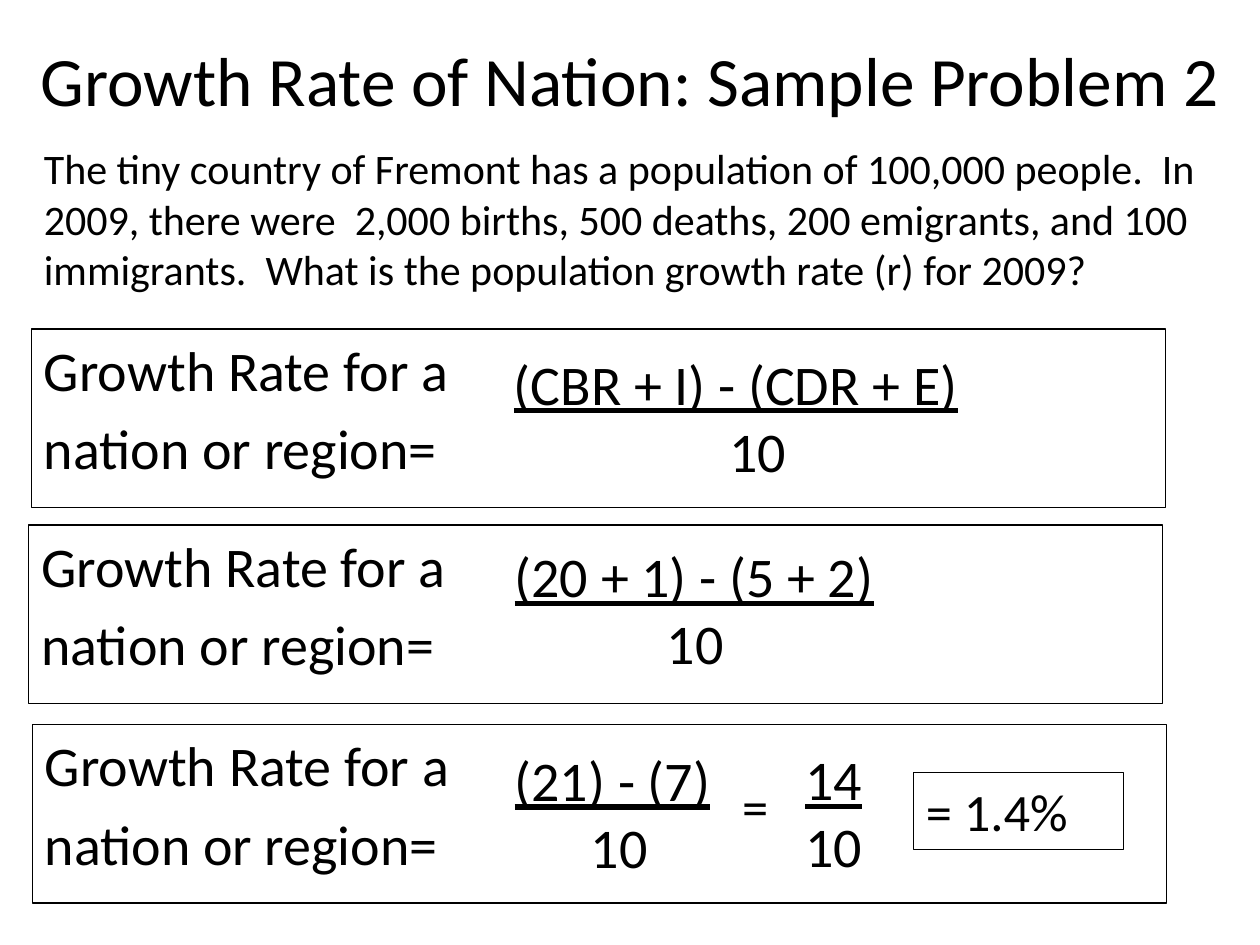
"""Build a slide that solves a population growth rate problem."""
from dataclasses import dataclass

from pptx import Presentation
from pptx.dml.color import RGBColor
from pptx.enum.shapes import MSO_SHAPE
from pptx.enum.text import MSO_ANCHOR, PP_ALIGN
from pptx.util import Pt

RECT = MSO_SHAPE.RECTANGLE
TOP, MIDDLE = MSO_ANCHOR.TOP, MSO_ANCHOR.MIDDLE
LEFT, CENTER = PP_ALIGN.LEFT, PP_ALIGN.CENTER
FONT = "Calibri"
COLORS = {"ink": "000000", "paper": "FFFFFF"}
PANEL_W, PANEL_H = 648, 102
FRACTION_H = 85


@dataclass
class Box:
    x: float
    y: float
    w: float
    h: float


@dataclass
class Line:
    text: str
    size: float = 32
    underline: bool = False
    indent: float = 0
    before: float = 0
    align: PP_ALIGN = LEFT


@dataclass
class Fraction:
    box: Box
    top: str
    bottom: str
    bottom_indent: float
    top_indent: float = 0


PANELS = [(18, 188), (16.5, 300), (18.5, 414)]
FRACTIONS = [
    Fraction(Box(286.5, 196, 284, FRACTION_H), "(CBR + I) - (CDR + E)", "10", 123),
    Fraction(Box(287, 306, 230, FRACTION_H), "(20 + 1) - (5 + 2)", "10", 87),
    Fraction(Box(287, 422.5, 130, FRACTION_H), "(21) - (7)", "10", 43.5),
    Fraction(Box(417, 422, 87, FRACTION_H), "14", "10", 36, 36),
]


def add_text(s, box: Box, lines: list[Line], framed: bool = False,
             anchor: MSO_ANCHOR = TOP) -> None:
    """Add a text box or an outlined rectangle holding the given lines."""
    place = [Pt(v) for v in (box.x, box.y, box.w, box.h)]
    if framed:
        sp = s.shapes.add_shape(RECT, *place)
        sp.shadow.inherit = False
        sp.fill.background()
        sp.line.color.rgb = RGBColor.from_string(COLORS["ink"])
        sp.line.width = Pt(0.75)
    else:
        sp = s.shapes.add_textbox(*place)
    tf = sp.text_frame
    tf.word_wrap = True
    tf.vertical_anchor = anchor
    for i, line in enumerate(lines):
        p = tf.add_paragraph() if i else tf.paragraphs[0]
        p.alignment = line.align
        p.space_before = Pt(line.before)
        if line.indent:
            p._p.get_or_add_pPr().set("marL", str(Pt(line.indent)))
        r = p.add_run()
        r.text = line.text
        r.font.name = FONT
        r.font.size = Pt(line.size)
        r.font.underline = line.underline
        r.font.color.rgb = RGBColor.from_string(COLORS["ink"])


def add_panel(s, x: float, y: float) -> None:
    """Add a framed step with the growth rate label."""
    label = [Line("Growth Rate for a"), Line("nation or region=", before=6.4)]
    add_text(s, Box(x, y, PANEL_W, PANEL_H), label, framed=True)


def add_fraction(s, f: Fraction) -> None:
    """Add an underlined numerator above its denominator."""
    add_text(s, f.box, [Line(f.top, underline=True, indent=f.top_indent),
                        Line(f.bottom, indent=f.bottom_indent)])


def main() -> None:
    """Build and save the slide."""
    prs = Presentation()
    prs.slide_width, prs.slide_height = Pt(720), Pt(540)
    s = prs.slides.add_slide(prs.slide_layouts[6])
    s.background.fill.solid()
    s.background.fill.fore_color.rgb = RGBColor.from_string(COLORS["paper"])
    add_text(s, Box(12, 12, 696, 66),
             [Line("Growth Rate of Nation: Sample Problem 2", 39.6, align=CENTER)],
             anchor=MIDDLE)
    add_text(s, Box(18, 78, 684, 94), [Line(
        "The tiny country of Fremont has a population of 100,000 people.  "
        "In 2009, there were  2,000 births, 500 deaths, 200 emigrants, and 100 "
        "immigrants.  What is the population growth rate (r) for 2009?", 24)])
    for x, y in PANELS:
        add_panel(s, x, y)
    for fraction in FRACTIONS:
        add_fraction(s, fraction)
    add_text(s, Box(417, 439, 30, 44), [Line("=", 30)])
    add_text(s, Box(522, 441.5, 120, 44), [Line("= 1.4%", 30)], framed=True)
    prs.save("out.pptx")


if __name__ == "__main__":
    main()
